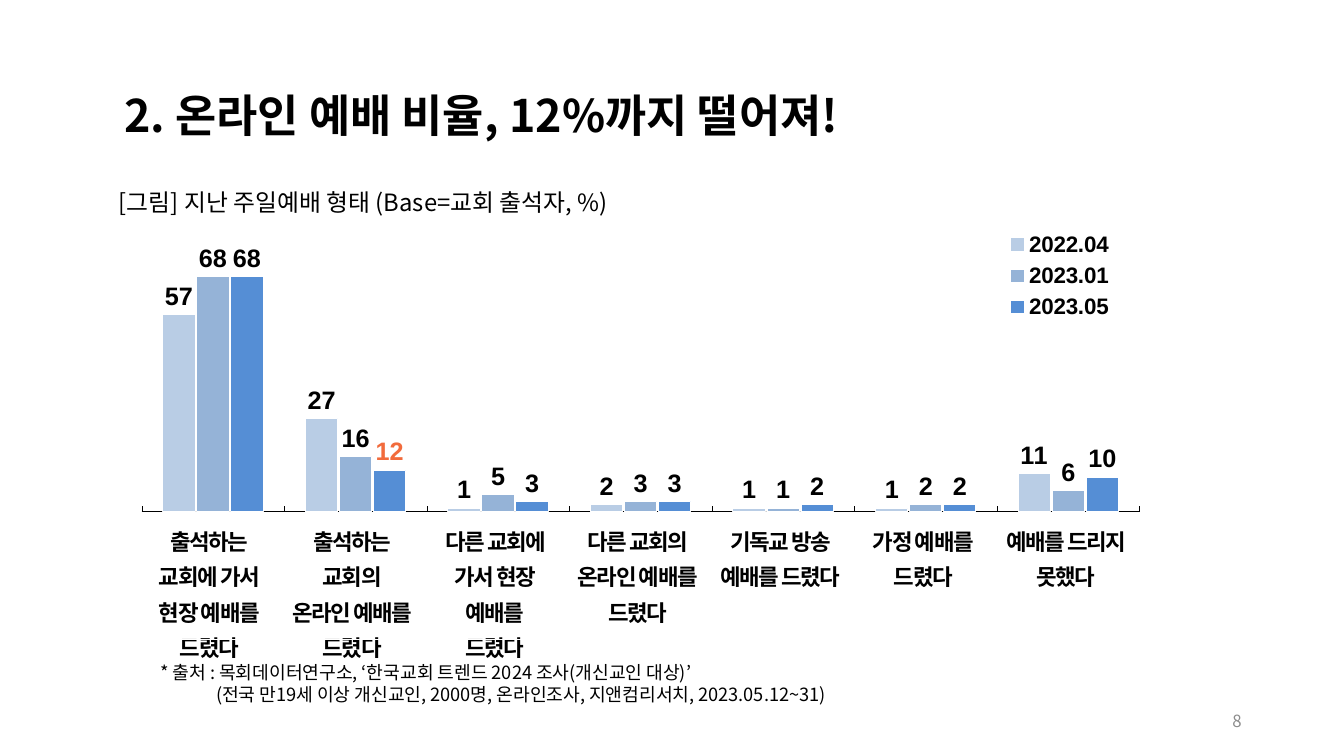
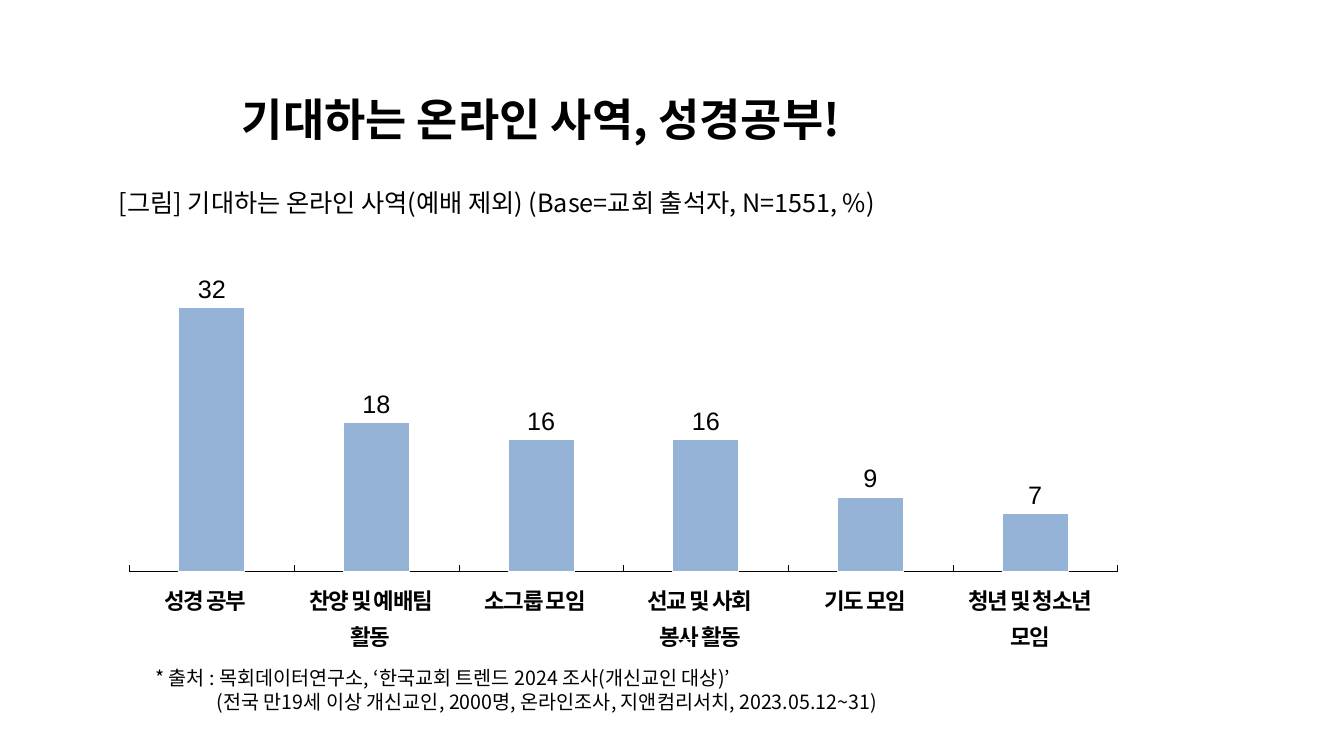
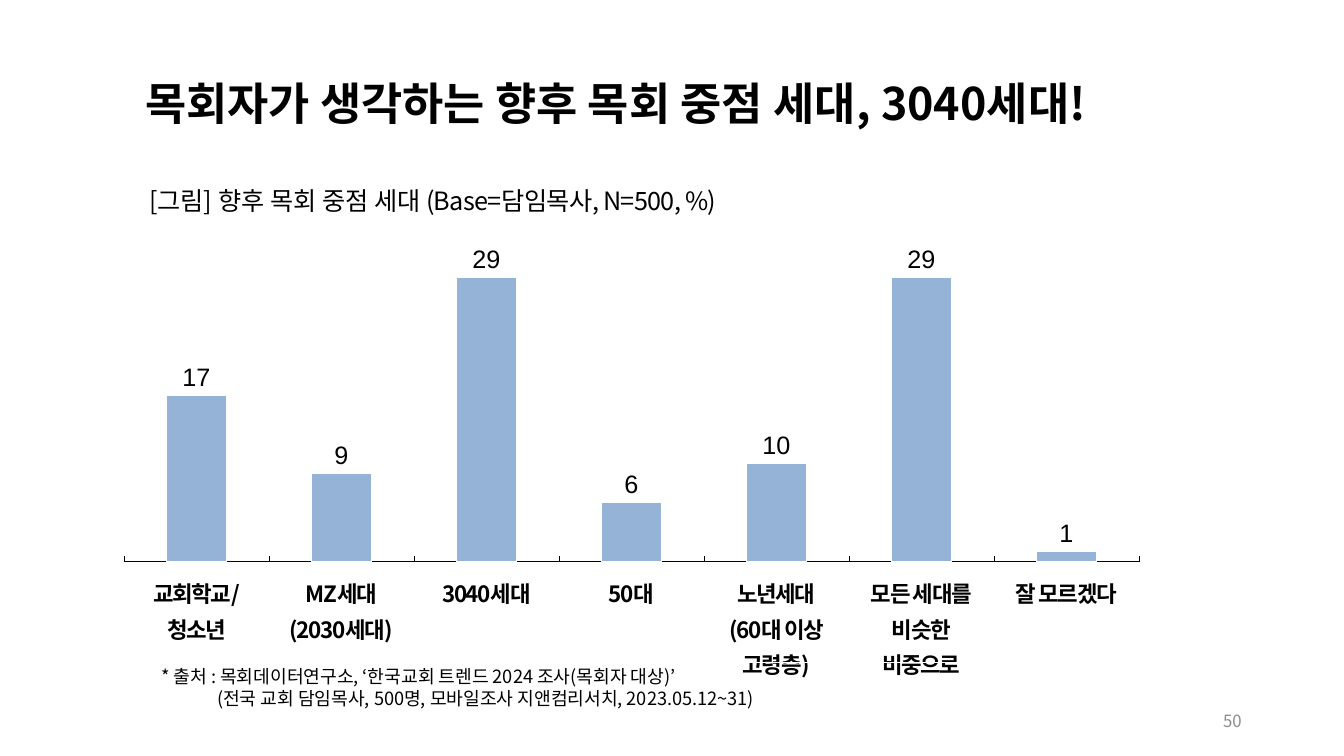
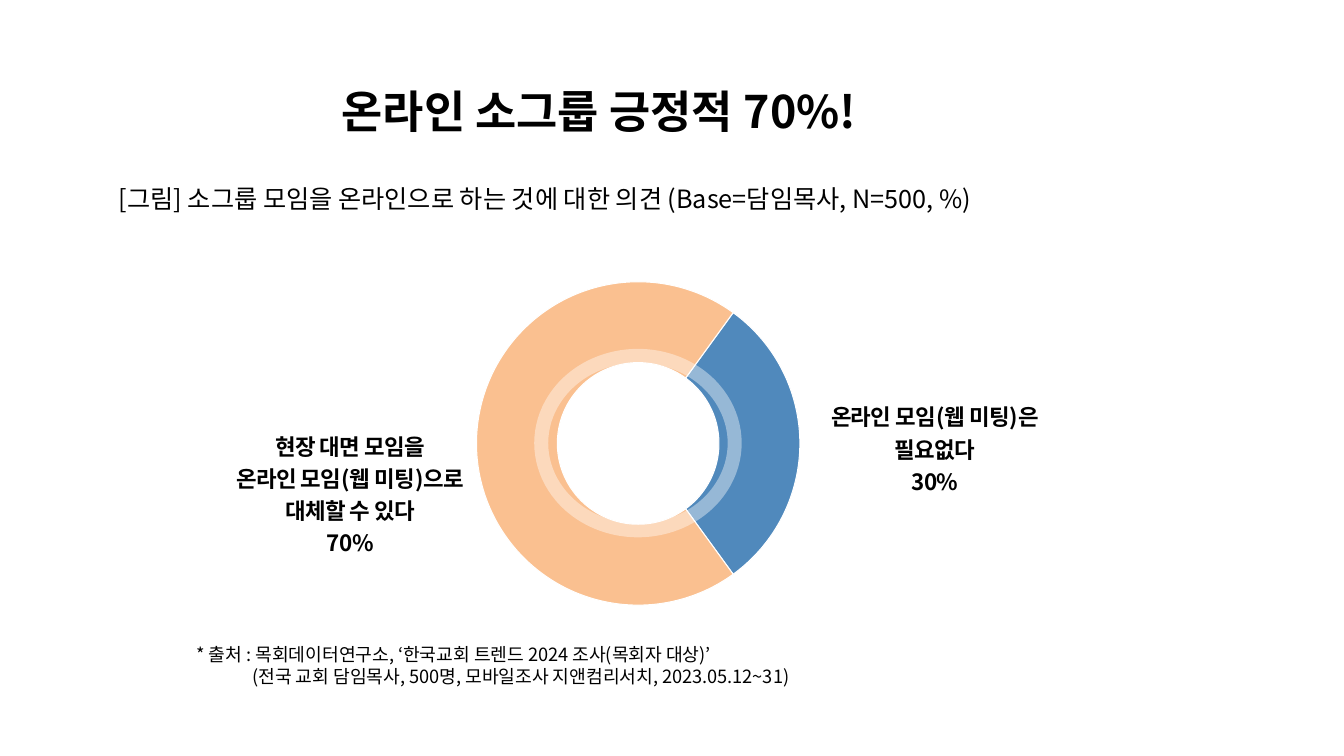
from lxml import etree
from pptx import Presentation
from pptx import util as u
from pptx.chart import data
from pptx.dml import color
from pptx.enum import chart as ch
from pptx.enum import shapes, text
from pptx.oxml import ns

FONT = "Noto Sans CJK KR"
BLACK, WHITE, GREY = "000000", "FFFFFF", "8C8C8C"
PALE, SOFT, STRONG, ORANGE = "B9CDE5", "95B3D7", "558ED5", "F26B3C"
RING_BLUE, RING_PEACH = "5089BC", "FAC090"
PAGE_WIDTH, PAGE_HEIGHT = 960, 540

BELIEVERS = ["* 출처 : 목회데이터연구소, ‘한국교회 트렌드 2024 조사(개신교인 대상)’",
             "(전국 만19세 이상 개신교인, 2000명, 온라인조사, 지앤컴리서치, 2023.05.12~31)"]
PASTORS = ["* 출처 : 목회데이터연구소, ‘한국교회 트렌드 2024 조사(목회자 대상)’",
           "(전국 교회 담임목사, 500명, 모바일조사 지앤컴리서치, 2023.05.12~31)"]


def rgb(value):
    return color.RGBColor.from_string(value)


def place(host, x, y, width, height, inner=False):
    """Give a plot area or a legend a fixed place, in fractions of the chart."""
    for old in host.findall(ns.qn("c:layout")):
        host.remove(old)
    layout = etree.Element(ns.qn("c:layout"))
    manual = etree.SubElement(layout, ns.qn("c:manualLayout"))
    values = {"layoutTarget": "inner"} if inner else {}
    values |= {"xMode": "edge", "yMode": "edge", "x": x, "y": y, "w": width, "h": height}
    for name, value in values.items():
        etree.SubElement(manual, ns.qn("c:" + name)).set("val", str(value))
    position = host.find(ns.qn("c:legendPos"))
    if position is None:
        host.insert(0, layout)
    else:
        position.addnext(layout)


class Report:
    """The deck, its style and the current page."""

    title_style = {"size": 32, "bold": True}
    label_style = {"size": 16, "bold": True}

    def __init__(self):
        self.deck = Presentation()
        self.deck.slide_width = u.Pt(PAGE_WIDTH)
        self.deck.slide_height = u.Pt(PAGE_HEIGHT)

    # Text
    def style(self, font, size, bold=False, tint=BLACK, name=FONT):
        values = {"size": u.Pt(size), "bold": bold, "name": name}
        for key, value in values.items():
            setattr(font, key, value)
        font.color.rgb = rgb(tint)

    def add_span(self, para, words, spacing=0, **style):
        span = para.add_run()
        span.text = words
        self.style(span.font, **style)
        properties = span.font._element
        etree.SubElement(properties, ns.qn("a:ea")).set("typeface", FONT)
        if spacing:
            properties.set("spc", str(round(spacing * 100)))

    def add_lines(self, frame, lines, align="LEFT", line_spacing=None, **style):
        for index, line in enumerate(lines):
            para = frame.add_paragraph() if index else frame.paragraphs[0]
            para.alignment = getattr(text.PP_ALIGN, align)
            if line_spacing:
                para.line_spacing = line_spacing
            self.add_span(para, line, **style)

    def text_box(self, at, lines, **style):
        box = self.page.shapes.add_textbox(*map(u.Pt, at))
        box.text_frame.word_wrap = True
        self.add_lines(box.text_frame, lines, **style)
        return box.text_frame

    # Page parts
    def new_page(self, words, left, top):
        self.page = self.deck.slides.add_slide(self.deck.slide_layouts[5])
        title = self.page.shapes.title
        place_values = {"left": left, "top": top, "width": PAGE_WIDTH - 24 - left, "height": 46}
        for key, value in place_values.items():
            setattr(title, key, u.Pt(value))
        frame = title.text_frame
        frame_values = {"word_wrap": True, "auto_size": text.MSO_AUTO_SIZE.NONE,
                        "vertical_anchor": text.MSO_ANCHOR.TOP}
        for key, value in frame_values.items():
            setattr(frame, key, value)
        self.add_lines(frame, [words], **self.title_style)

    def caption(self, left, top, words, size=18, base=None):
        frame = self.text_box((left, top, 830, 29), [words], size=size)
        if base:
            self.add_span(frame.paragraphs[0], base, spacing=-0.5, size=size)

    def source_note(self, left, top, lines, size=13, indent=40):
        frame = self.text_box((left, top, 705, 39), lines, size=size)
        frame.paragraphs[1]._p.get_or_add_pPr().set("marL", str(u.Pt(indent)))

    def page_number(self, number):
        frame = self.text_box((678, 500.4, 216, 28.8), [number], align="RIGHT", size=12, tint=GREY)
        frame.vertical_anchor = text.MSO_ANCHOR.MIDDLE

    # Charts
    def add_chart(self, kind, at, series, plot_place):
        values = data.CategoryChartData(number_format="0")
        count = len(next(iter(series.values())))
        values.categories = [str(number + 1) for number in range(count)]
        for name, numbers in series.items():
            values.add_series(name, numbers)
        chart = self.page.shapes.add_chart(kind, *map(u.Pt, at), values).chart
        chart.has_title = chart.has_legend = False
        self.style(chart.font, 9, True, name="Arial")
        place(chart._chartSpace.chart.plotArea, *plot_place, inner=True)
        return chart

    def paint(self, part, tint):
        part.format.fill.solid()
        part.format.fill.fore_color.rgb = rgb(tint)
        part.format.line.color.rgb = rgb(WHITE)
        part.format.line.width = u.Pt(0.75)

    def columns(self, at, series, tints, top_value, gap, plot_place, bold=False):
        chart = self.add_chart(ch.XL_CHART_TYPE.COLUMN_CLUSTERED, at, series, plot_place)
        plot = chart.plots[0]
        for key, value in {"gap_width": gap, "overlap": -5, "vary_by_categories": False}.items():
            setattr(plot, key, value)
        for axis, tick in ((chart.category_axis, "INSIDE"), (chart.value_axis, "NONE")):
            axis_values = {"has_major_gridlines": False,
                           "tick_label_position": ch.XL_TICK_LABEL_POSITION.NONE,
                           "major_tick_mark": getattr(ch.XL_TICK_MARK, tick),
                           "minor_tick_mark": ch.XL_TICK_MARK.NONE}
            for key, value in axis_values.items():
                setattr(axis, key, value)
        chart.category_axis.format.line.color.rgb = rgb(BLACK)
        chart.category_axis.format.line.width = u.Pt(0.25)
        chart.value_axis.format.line.fill.background()
        chart.value_axis.minimum_scale = 0
        chart.value_axis.maximum_scale = top_value
        for bars, tint in zip(plot.series, tints):
            bars.invert_if_negative = False
            self.paint(bars, tint)
            labels = bars.data_labels
            label_values = {"show_value": True, "number_format": "0",
                            "number_format_is_linked": False,
                            "position": ch.XL_LABEL_POSITION.OUTSIDE_END}
            for key, value in label_values.items():
                setattr(labels, key, value)
            self.style(labels.font, 18, bold, name="Arial")
        return chart

    def legend(self, chart, *at):
        chart.has_legend = True
        legend = chart.legend
        legend.position = ch.XL_LEGEND_POSITION.RIGHT
        legend.include_in_layout = False
        self.style(legend.font, 16, True, name="Arial")
        place(legend._element, *at)

    def ring(self, at, numbers, tints):
        chart = self.add_chart(ch.XL_CHART_TYPE.DOUGHNUT, at, {"Series 1": numbers},
                               (0.025, 0.039, 0.949, 0.922))
        plot = chart.plots[0]
        plot.has_data_labels = False
        for name, value in {"firstSliceAng": 36, "holeSize": 49}.items():
            plot._element.find(ns.qn("c:" + name)).set("val", str(value))
        for index, tint in enumerate(tints):
            self.paint(plot.series[0].points[index], tint)

    def halo(self, at):
        oval = self.page.shapes.add_shape(shapes.MSO_SHAPE.OVAL, *map(u.Pt, at))
        oval.shadow.inherit = False
        oval.fill.background()
        oval.line.color.rgb = rgb(WHITE)
        oval.line.width = u.Pt(10)
        tint = oval.line._ln.find(".//" + ns.qn("a:srgbClr"))
        etree.SubElement(tint, ns.qn("a:alpha")).set("val", "40000")

    # Category labels under the columns
    def label_row(self, left, top, width, labels):
        frame = self.page.shapes.add_table(1, len(labels), *map(u.Pt, (left, top, width, 34)))
        table = frame.table
        table.first_row = table.horz_banding = False
        margins = {"margin_left": 0.7, "margin_right": 0.7, "margin_top": 0.7, "margin_bottom": 0}
        for column, label in enumerate(labels):
            table.columns[column].width = u.Pt(width / len(labels))
            cell = table.cell(0, column)
            cell.fill.background()
            for key, value in margins.items():
                setattr(cell, key, u.Pt(value))
            self.add_lines(cell.text_frame, label.split("\n"), align="CENTER", line_spacing=1.1,
                           spacing=-1, **self.label_style)

    def ring_label(self, at, lines):
        self.text_box(at, lines, align="CENTER", line_spacing=1.2, spacing=-0.4,
                      **self.label_style)


def main():
    report = Report()

    # Worship attendance
    report.new_page("2. 온라인 예배 비율, 12%까지 떨어져!", 81.4, 59)
    report.caption(77.8, 130.3, "[그림] 지난 주일예배 형태 (Base=교회 출석자, %)", size=17)
    attendance = {"2022.04": (57, 27, 1, 2, 1, 1, 11),
                  "2023.01": (68, 16, 5, 3, 1, 2, 6),
                  "2023.05": (68, 12, 3, 3, 2, 2, 10)}
    chart = report.columns((86.4, 147.6, 741, 224.6), attendance, (PALE, SOFT, STRONG), 80, 130,
                           (0.02, 0.092, 0.962, 0.878), bold=True)
    report.legend(chart, 0.85, 0.06, 0.11, 0.32)
    online_label = chart.plots[0].series[2].points[1].data_label
    report.style(online_label.font, 18, True, ORANGE, "Arial")
    online_label.position = ch.XL_LABEL_POSITION.OUTSIDE_END
    report.label_row(98.6, 371.5, 714, [
        "출석하는\n교회에 가서\n현장 예배를\n드렸다", "출석하는\n교회의\n온라인 예배를\n드렸다",
        "다른 교회에 가서 현장\n예배를\n드렸다", "다른 교회의\n온라인 예배를\n드렸다",
        "기독교 방송\n예배를 드렸다", "가정 예배를\n드렸다", "예배를 드리지\n못했다"])
    report.source_note(107.3, 468.7, BELIEVERS)
    report.page_number("8")

    # Expected online ministry
    report.new_page("기대하는 온라인 사역, 성경공부!", 165.6, 62)
    report.caption(77.8, 130.3,
                   "[그림] 기대하는 온라인 사역(예배 제외) (Base=교회 출석자, N=1551, %)")
    report.columns((77.8, 147.6, 733.7, 268.6), {"Series 1": (32, 18, 16, 16, 9, 7)}, [SOFT],
                   40, 150, (0.02, 0.092, 0.962, 0.878))
    report.label_row(87.8, 414, 707, [
        "성경 공부", "찬양 및 예배팀 활동", "소그룹 모임", "선교 및 사회\n봉사 활동",
        "기도 모임", "청년 및 청소년\n모임"])
    report.source_note(103.7, 472.3, BELIEVERS, size=14, indent=44)

    # Focus generation
    report.new_page("목회자가 생각하는 향후 목회 중점 세대, 3040세대!", 96.5, 50.4)
    report.caption(99.4, 128.9, "[그림] 향후 목회 중점 세대 ", base="(Base=담임목사, N=500, %)")
    report.columns((73.4, 167.8, 753.8, 268.6), {"Series 1": (17, 9, 29, 6, 10, 29, 1)}, [SOFT],
                   30, 140, (0.02, 0.088, 0.962, 0.781))
    report.label_row(88.6, 409, 725, [
        "교회학교/\n청소년", "MZ세대\n(2030세대)", "3040세대", "50대",
        "노년세대\n(60대 이상 고령층)", "모든 세대를\n비슷한\n비중으로", "잘 모르겠다"])
    report.source_note(108, 471.6, PASTORS)
    report.page_number("50")

    # Online small groups
    report.new_page("온라인 소그룹 긍정적 70%!", 236.9, 56.2)
    report.caption(77.8, 127.4,
                   "[그림] 소그룹 모임을 온라인으로 하는 것에 대한 의견 (Base=담임목사, N=500, %)")
    report.ring((316, 191.5, 280, 250.6), (30, 70), (RING_BLUE, RING_PEACH))
    report.halo((386.6, 254.2, 138.2, 124.6))
    report.ring_label((146.2, 301.7, 208, 100),
                      ["현장 대면 모임을", "온라인 모임(웹 미팅)으로", "대체할 수 있다", "70%"])
    report.ring_label((578.9, 280.8, 177.8, 77), ["온라인 모임(웹 미팅)은", "필요없다", "30%"])
    report.source_note(133.2, 455.8, PASTORS)

    report.deck.save("out.pptx")


if __name__ == "__main__":
    main()
